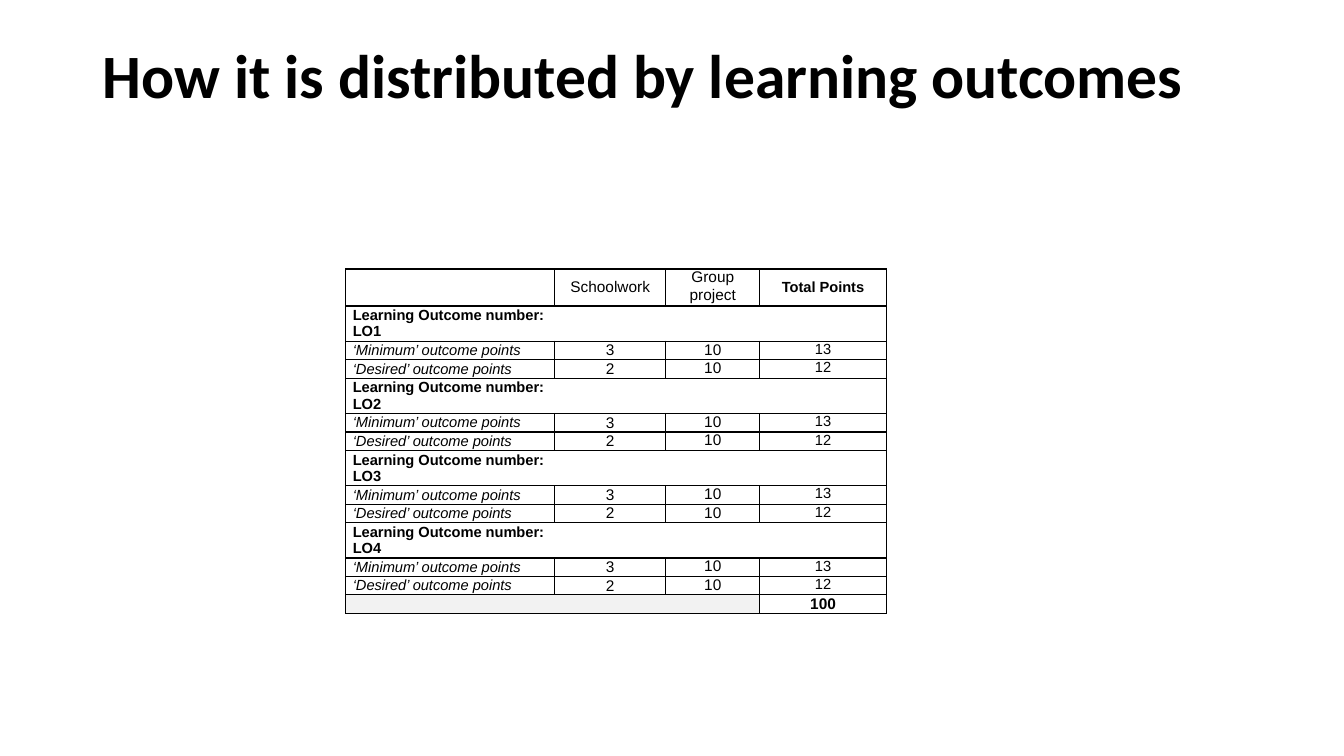
"""Build a slide showing how points are distributed by learning outcomes."""
from dataclasses import dataclass

from lxml.etree import SubElement
from pptx import Presentation
from pptx.dml.color import RGBColor
from pptx.enum.text import MSO_ANCHOR, MSO_AUTO_SIZE, PP_ALIGN
from pptx.oxml.ns import qn
from pptx.slide import Slide
from pptx.table import _Cell
from pptx.util import Cm, Pt

BLACK = RGBColor(0x00, 0x00, 0x00)
LIGHT_GREY = RGBColor(0xF2, 0xF2, 0xF2)
NO_STYLE = "{2D5ABB26-0587-4C30-8999-92F81FD0307C}"
COLUMN_WIDTHS = (5.27, 2.8, 2.37, 3.19)
HEADER_HEIGHT, OUTCOME_HEIGHT, POINTS_HEIGHT = 0.93, 0.89, 0.465
ALL_SIDES = "LRTB"
OPEN_ROW = ("LTB", "TB", "TB", "RTB")


@dataclass(frozen=True)
class CellText:
    """Text of one table cell with its format."""
    text: str = ""
    size: float = 10.5
    bold: bool = False
    italic: bool = False
    centred: bool = True
    anchor: MSO_ANCHOR = MSO_ANCHOR.MIDDLE


@dataclass(frozen=True)
class TableRow:
    """One table row with its height in centimetres and bordered sides."""
    height: float
    cells: tuple[CellText, ...]
    sides: tuple[str, ...] = (ALL_SIDES,) * 4
    shaded_cells: int = 0


def points_row(label: str, schoolwork: str, project: str, total: str) -> TableRow:
    """Describe a row of outcome points."""
    return TableRow(POINTS_HEIGHT, (
        CellText(label, italic=True, centred=False),
        CellText(schoolwork, 11),
        CellText(project, 11, anchor=MSO_ANCHOR.TOP),
        CellText(total, anchor=MSO_ANCHOR.TOP),
    ))


def outcome_rows(heading: str) -> list[TableRow]:
    """Describe the three rows of one learning outcome."""
    cells = (CellText(heading, bold=True, centred=False),) + (CellText(),) * 3
    return [
        TableRow(OUTCOME_HEIGHT, cells, OPEN_ROW),
        points_row("‘Minimum’ outcome points", "3", "10", "13"),
        points_row("‘Desired’ outcome points", "2", "10", "12"),
    ]


def table_rows() -> list[TableRow]:
    """Describe every row of the table."""
    header = TableRow(HEADER_HEIGHT, (
        CellText(),
        CellText("Schoolwork", 11),
        CellText("Group project", 11, anchor=MSO_ANCHOR.TOP),
        CellText("Total Points", bold=True),
    ))
    headings = (
        "Learning Outcome number: LO1",
        "Learning Outcome number: LO2",
        "Learning Outcome number: LO3",
        "Learning Outcome number: LO4",
    )
    outcomes = [row for heading in headings for row in outcome_rows(heading)]
    total = TableRow(
        POINTS_HEIGHT,
        (CellText(),) * 3 + (CellText("100", 11, bold=True),),
        ("LTB", "TB", "RTB", ALL_SIDES),
        shaded_cells=3,
    )
    return [header, *outcomes, total]


def set_attributes(target: object, values: dict[str, object]) -> None:
    """Set each named attribute on the target."""
    for name, value in values.items():
        setattr(target, name, value)


def draw_borders(cell: _Cell, sides: str) -> None:
    """Give the cell a black line on each named side and none elsewhere."""
    properties = cell._tc.get_or_add_tcPr()
    for side in ALL_SIDES:
        line = SubElement(properties, qn(f"a:ln{side}"), w=str(Pt(1)))
        if side in sides:
            fill = SubElement(line, qn("a:solidFill"))
            SubElement(fill, qn("a:srgbClr"), val=str(BLACK))
        else:
            SubElement(line, qn("a:noFill"))


def fill_cell(cell: _Cell, content: CellText, sides: str, shaded: bool) -> None:
    """Write and format one cell."""
    set_attributes(cell, {
        "margin_left": Cm(0.18), "margin_right": Cm(0.18),
        "margin_top": 0, "margin_bottom": 0,
        "vertical_anchor": content.anchor,
    })
    draw_borders(cell, sides)
    if shaded:
        cell.fill.solid()
        cell.fill.fore_color.rgb = LIGHT_GREY
    else:
        cell.fill.background()
    paragraph = cell.text_frame.paragraphs[0]
    if not content.text:
        SubElement(paragraph._p, qn("a:endParaRPr"), sz=str(int(content.size * 100)))
        return
    paragraph.alignment = PP_ALIGN.CENTER if content.centred else PP_ALIGN.LEFT
    run = paragraph.add_run()
    run.text = content.text
    set_attributes(run.font, {
        "name": "Arial", "size": Pt(content.size),
        "bold": content.bold, "italic": content.italic,
    })
    run.font.color.rgb = BLACK


def add_title(slide: Slide) -> None:
    """Place and format the slide title."""
    title = slide.shapes.title
    set_attributes(title, {
        "left": Cm(2.34), "top": Cm(1.02), "width": Cm(29.21), "height": Cm(3.68),
    })
    set_attributes(title.text_frame, {
        "auto_size": MSO_AUTO_SIZE.NONE, "word_wrap": True,
        "vertical_anchor": MSO_ANCHOR.TOP,
    })
    paragraph = title.text_frame.paragraphs[0]
    set_attributes(paragraph, {"alignment": PP_ALIGN.LEFT, "line_spacing": 0.9})
    run = paragraph.add_run()
    run.text = "How it is distributed by learning outcomes"
    set_attributes(run.font, {"name": "Calibri", "size": Pt(44), "bold": True})
    run.font.color.rgb = BLACK


def add_points_table(slide: Slide) -> None:
    """Add the table of points by learning outcome."""
    rows = table_rows()
    frame = slide.shapes.add_table(
        len(rows), len(COLUMN_WIDTHS), Cm(8.71), Cm(6.78),
        Cm(sum(COLUMN_WIDTHS)), Cm(sum(row.height for row in rows)),
    )
    table = frame.table
    set_attributes(table, {"first_row": False, "horz_banding": False})
    table._tbl.tblPr.find(qn("a:tableStyleId")).text = NO_STYLE
    for column, width in zip(table.columns, COLUMN_WIDTHS):
        column.width = Cm(width)
    for table_row, row in zip(table.rows, rows):
        table_row.height = Cm(row.height)
        for index, cell in enumerate(table_row.cells):
            fill_cell(cell, row.cells[index], row.sides[index], index < row.shaded_cells)


def main() -> None:
    """Create and save the presentation."""
    presentation = Presentation()
    set_attributes(presentation, {"slide_width": Cm(33.87), "slide_height": Cm(19.05)})
    slide = presentation.slides.add_slide(presentation.slide_layouts[5])
    add_title(slide)
    add_points_table(slide)
    presentation.save("out.pptx")


if __name__ == "__main__":
    main()
